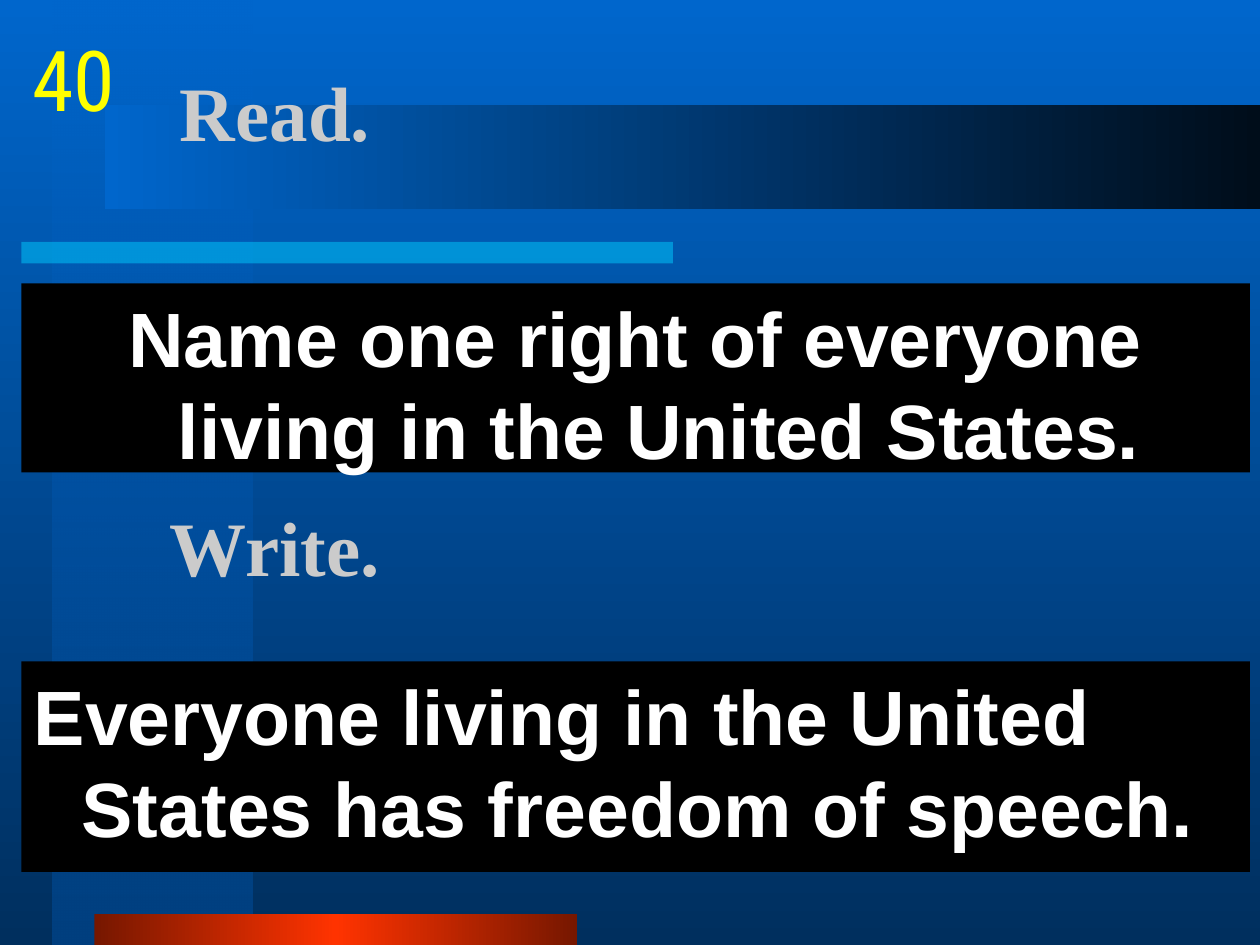
from lxml.etree import SubElement
from pptx import Presentation
from pptx.dml.color import RGBColor
from pptx.enum.shapes import MSO_SHAPE
from pptx.enum.text import MSO_ANCHOR, PP_ALIGN
from pptx.oxml.ns import qn
from pptx.util import Inches, Pt

WIDTH, HEIGHT = 10, 7.5
DOWN, RIGHT = 270, 0
PANEL_LEFT, PANEL_WIDTH = 0.17, 9.75


def color(value):
    """Turn a hex string into a colour."""
    return RGBColor.from_string(value)


def add_alpha(color_element, percent):
    """Set the opacity of a colour element."""
    SubElement(color_element, qn("a:alpha"), val=str(percent * 1000))


def paint_gradient(fill, owner, stops, angle):
    """Fill with a linear gradient of (position, colour, opacity) stops."""
    fill.gradient()
    fill.gradient_angle = angle
    stop_list = next(owner.iter(qn("a:gsLst")))
    for stop in list(stop_list):
        stop_list.remove(stop)
    for position, value, opacity in stops:
        stop = SubElement(stop_list, qn("a:gs"), pos=str(position * 1000))
        add_alpha(SubElement(stop, qn("a:srgbClr"), val=value), opacity)


def add_rectangle(slide, box):
    """Add a plain rectangle without line or shadow."""
    shape = slide.shapes.add_shape(MSO_SHAPE.RECTANGLE, *map(Inches, box))
    shape.shadow.inherit = False
    shape.line.fill.background()
    return shape


def add_gradient_bar(slide, box, stops, angle):
    """Add a bar with a gradient."""
    shape = add_rectangle(slide, box)
    paint_gradient(shape.fill, shape.element, stops, angle)


def add_solid_bar(slide, box, value, opacity=100):
    """Add a bar in one colour and return it."""
    shape = add_rectangle(slide, box)
    shape.fill.solid()
    shape.fill.fore_color.rgb = color(value)
    add_alpha(next(shape.element.spPr.iter(qn("a:srgbClr"))), opacity)
    return shape


def write(shape, text, size, font, value, bold, align, anchor):
    """Write one paragraph into a shape and return the paragraph."""
    frame = shape.text_frame
    frame.word_wrap = True
    frame.vertical_anchor = anchor
    paragraph = frame.paragraphs[0]
    paragraph.alignment = align
    run = paragraph.add_run()
    run.text = text
    run.font.size = Pt(size)
    run.font.name = font
    run.font.bold = bold
    run.font.color.rgb = color(value)
    return paragraph


def add_heading(slide, box, text):
    """Add a grey serif heading."""
    shape = slide.shapes.add_textbox(*map(Inches, box))
    write(shape, text, 44, "Times New Roman", "CBCBCB", True,
          PP_ALIGN.LEFT, MSO_ANCHOR.MIDDLE)


def add_panel(slide, top, height, text, align):
    """Add a black panel with a hanging white sentence."""
    shape = add_solid_bar(slide, (PANEL_LEFT, top, PANEL_WIDTH, height), "000000")
    paragraph = write(shape, text, 44, "Arial", "FFFFFF", True,
                      align, MSO_ANCHOR.TOP)
    paragraph.line_spacing = Pt(53)
    paragraph.space_before = Pt(2)
    properties = paragraph._p.get_or_add_pPr()
    properties.set("marL", str(Inches(0.38)))
    properties.set("indent", str(-Inches(0.38)))


def add_number(slide, box, text):
    """Add the yellow card number on one line."""
    shape = slide.shapes.add_textbox(*map(Inches, box))
    shape.text_frame.margin_left = shape.text_frame.margin_right = 0
    write(shape, text, 48, "Roboto Condensed", "FFFF00", False,
          PP_ALIGN.CENTER, MSO_ANCHOR.TOP)


def add_backdrop(slide):
    """Paint the background and its decorative bars."""
    paint_gradient(slide.background.fill, slide.element,
                   [(0, "0066CC", 100), (100, "002F5E", 100)], DOWN)
    add_gradient_bar(slide, (0.42, 0, 1.58, HEIGHT),
                     [(0, "0066CC", 50), (100, "004080", 100)], DOWN)
    add_solid_bar(slide, (PANEL_LEFT, 1.92, 5.17, 0.17), "00CCFF", 50)
    add_gradient_bar(slide, (0.75, HEIGHT - 0.25, 3.83, 0.25),
                     [(0, "761700", 100), (50, "FF3300", 100),
                      (100, "761700", 100)], RIGHT)
    add_gradient_bar(slide, (0.83, 0.83, WIDTH - 0.83, 0.83),
                     [(0, "0066CC", 100), (100, "000D1A", 100)], RIGHT)


def main():
    """Build and save the presentation."""
    presentation = Presentation()
    presentation.slide_width = Inches(WIDTH)
    presentation.slide_height = Inches(HEIGHT)
    slide = presentation.slides.add_slide(presentation.slide_layouts[6])
    add_backdrop(slide)
    add_heading(slide, (1.33, 0.25, 8.5, 1.25), "Read.")
    add_panel(slide, 2.25, 1.5,
              "Name one right of everyone living in the United States.",
              PP_ALIGN.CENTER)
    add_heading(slide, (1.25, 3.5, 8.5, 1.67), "Write.")
    add_panel(slide, 5.25, 1.67,
              "Everyone living in the United States has freedom of speech.",
              PP_ALIGN.LEFT)
    add_number(slide, (0.17, 0.17, 0.83, 0.83), "40")
    presentation.save("out.pptx")


if __name__ == "__main__":
    main()
